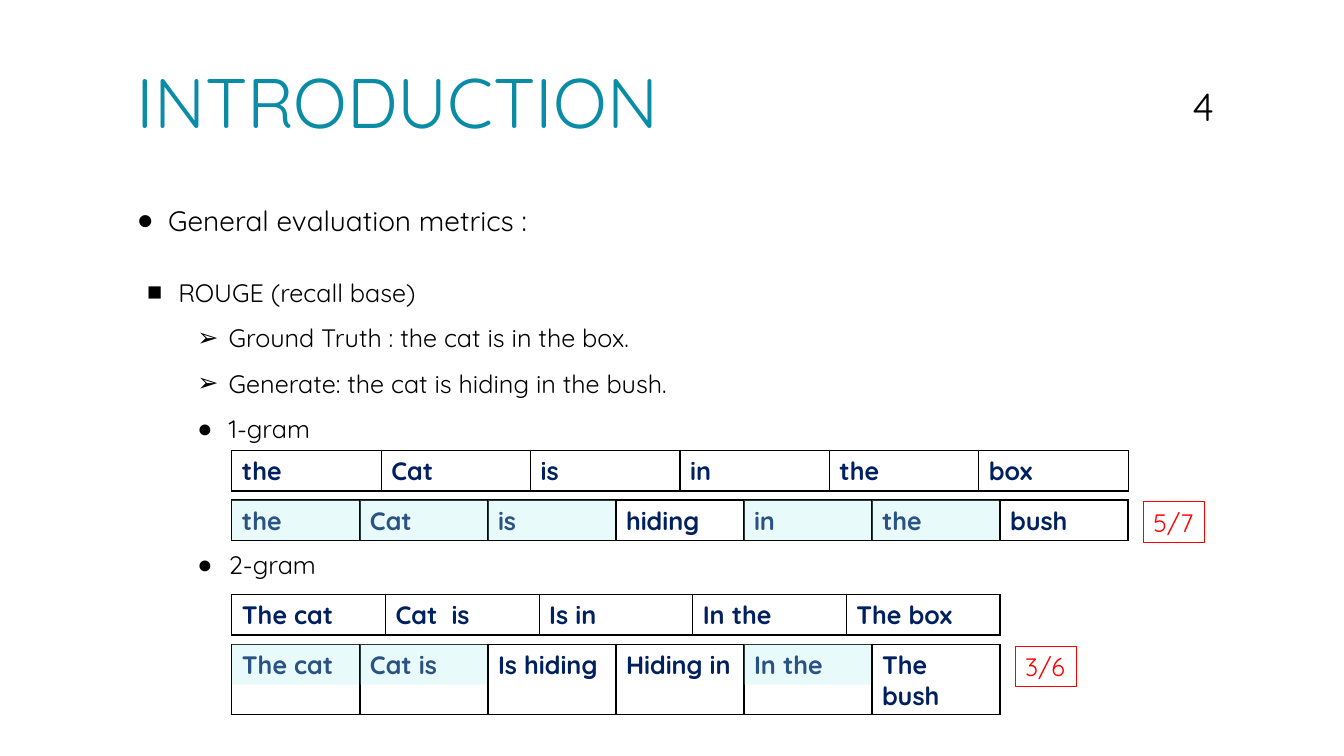
from dataclasses import dataclass

from lxml.etree import SubElement
from pptx import Presentation
from pptx.dml.color import RGBColor
from pptx.enum.shapes import MSO_SHAPE as Shape
from pptx.enum.text import MSO_ANCHOR as Anchor, PP_ALIGN as Align
from pptx.oxml import parse_xml
from pptx.oxml.ns import nsdecls, qn
from pptx.util import Inches, Pt


@dataclass(frozen=True)
class Theme:
    font: str = "Quicksand"
    teal: str = "0A8CA6"
    black: str = "000000"
    navy: str = "002060"
    red: str = "FF0000"
    match: str = "A9ECF1"
    title: int = 50
    number: int = 28
    topic: int = 20
    body: int = 18


THEME = Theme()
TABLE_LEFT = 2.3
ROW_HEIGHT = 0.4
WORD_WIDTH = 1.27
LINE_PITCH = 0.45


def style(para, text, size, color, bold=False):
    para.text = text
    font = para.font
    font.name, font.size, font.bold = THEME.font, Pt(size), bold
    font.color.rgb = RGBColor.from_string(color)


def add_text(page, box, text, size, color, anchor=Anchor.TOP, align=Align.LEFT):
    frame = page.shapes.add_textbox(*map(Inches, box)).text_frame
    frame.word_wrap = True
    frame.vertical_anchor = anchor
    style(frame.paragraphs[0], text, size, color)
    frame.paragraphs[0].alignment = align


def add_bullets(page, box, items, size, spacing):
    """Each item is (bullet, left margin in inches, text)."""
    frame = page.shapes.add_textbox(*map(Inches, box)).text_frame
    frame.word_wrap = True
    for index, (bullet, margin, text) in enumerate(items):
        para = frame.add_paragraph() if index else frame.paragraphs[0]
        para.line_spacing = spacing
        props = para._p.get_or_add_pPr()
        props.set("marL", str(Inches(margin)))
        props.set("indent", str(Inches(-0.31)))
        SubElement(props, qn("a:buFont")).set("typeface", "Arial")
        SubElement(props, qn("a:buChar")).set("char", bullet)
        style(para, text, size, THEME.black)


def add_borders(cell):
    props = cell._tc.get_or_add_tcPr()
    for index, side in enumerate(("lnL", "lnR", "lnT", "lnB")):
        props.insert(index, parse_xml(
            f'<a:{side} {nsdecls("a")} w="{Pt(1)}"><a:solidFill>'
            f'<a:srgbClr val="{THEME.black}"/></a:solidFill></a:{side}>'))


def add_word_row(page, left, top, width, words):
    table = page.shapes.add_table(
        1, len(words), *map(Inches, (left, top, width, ROW_HEIGHT))).table
    table.first_row = table.horz_banding = False
    for column, word in enumerate(words):
        table.columns[column].width = Inches(width / len(words))
        cell = table.cell(0, column)
        cell.fill.background()
        add_borders(cell)
        style(cell.text_frame.paragraphs[0], word, THEME.body, THEME.navy, True)


def add_match(page, left, top):
    match = page.shapes.add_shape(
        Shape.RECTANGLE, *map(Inches, (left, top, 1.26, ROW_HEIGHT)))
    match.shadow.inherit = False
    match.line.fill.background()
    match.fill.solid()
    match.fill.fore_color.rgb = RGBColor.from_string(THEME.match)
    color = match.fill._xPr.find(qn("a:solidFill"))[0]
    SubElement(color, qn("a:alpha")).set("val", "25000")


def add_score(page, left, top, text):
    score = page.shapes.add_textbox(*map(Inches, (left, top, 0.61, ROW_HEIGHT)))
    score.line.color.rgb = RGBColor.from_string(THEME.red)
    score.line.width = Pt(0.75)
    style(score.text_frame.paragraphs[0], text, THEME.body, THEME.red)


def add_comparison(page, top, width, truth, generated, matches, score):
    """Truth row above generated row, with matching words tinted."""
    lower = top + 0.49
    add_word_row(page, TABLE_LEFT, top, width, truth)
    add_word_row(page, TABLE_LEFT, lower, width, generated)
    for column in matches:
        add_match(page, TABLE_LEFT + column * WORD_WIDTH, lower)
    add_score(page, TABLE_LEFT + width + 0.15, lower + 0.02, score)


def add_header(page, left, top):
    add_text(page, (left, top, 9.25, 0.78), "INTRODUCTION",
             THEME.title, THEME.teal, Anchor.MIDDLE)
    add_text(page, (left + 10.1, top - 0.12, 1.15, 0.84), "4",
             THEME.number, THEME.black, Anchor.BOTTOM, Align.CENTER)


def add_outline(page, left, top):
    add_bullets(page, (left, top, 6.08, 0.77),
                [("●", 0.31, "General evaluation metrics :")], THEME.topic, 1.0)
    body_left, body_top = left + 0.1, top + 0.58
    add_bullets(page, (body_left, body_top, 7.08, 1.9), [
        ("■", 0.31, "ROUGE (recall base)"),
        ("➢", 0.81, "Ground Truth : the cat is in the box."),
        ("➢", 0.81, "Generate: the cat is hiding in the bush."),
        ("●", 0.81, "1-gram"),
    ], THEME.body, 1.5)
    add_bullets(page, (body_left, body_top + 6 * LINE_PITCH, 7.08, 0.55),
                [("●", 0.81, "2-gram")], THEME.body, 1.5)


def main():
    deck = Presentation()
    deck.slide_width, deck.slide_height = Inches(13.33), Inches(7.5)
    page = deck.slides.add_slide(deck.slide_layouts[6])

    # Title, page number and bullets
    add_header(page, 1.26, 0.61)
    add_outline(page, 1.26, 1.97)

    # 1-gram overlap
    add_comparison(page, 4.47, 7 * WORD_WIDTH,
                   ["the", "Cat", "is", "in", "the", "box"],
                   ["the", "Cat", "is", "hiding", "in", "the", "bush"],
                   [0, 1, 2, 4, 5], "5/7")

    # 2-gram overlap
    add_comparison(page, 5.9, 6 * WORD_WIDTH,
                   ["The cat", "Cat  is", "Is in", "In the", "The box"],
                   ["The cat", "Cat is", "Is hiding", "Hiding in", "In the", "The bush"],
                   [0, 1, 4], "3/6")

    deck.save("out.pptx")


if __name__ == "__main__":
    main()
